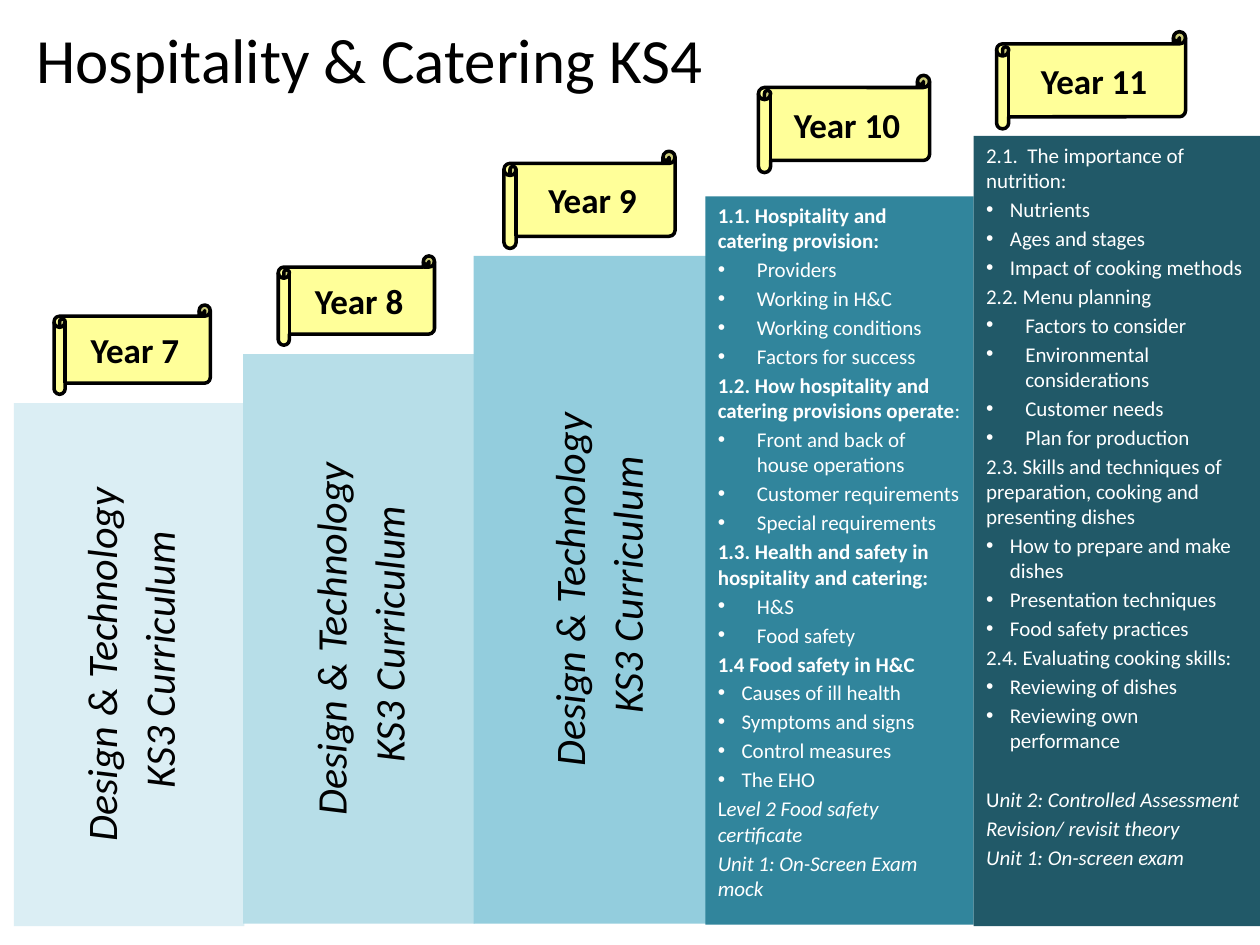
"""Build a staircase of school years for the Hospitality & Catering course."""
import pptx
import pptx.util
import pptx.dml.color
import pptx.enum.shapes
import pptx.enum.text
import lxml.etree

Cm, Pt = pptx.util.Cm, pptx.util.Pt
Shape = pptx.enum.shapes.MSO_SHAPE
Align = pptx.enum.text.PP_ALIGN
Anchor = pptx.enum.text.MSO_ANCHOR

TITLE = "Hospitality & Catering KS4"
KS3 = ["Design & Technology", " KS3 Curriculum"]

TEN = [
    ("head", "1.1. Hospitality and catering provision:"),
    ("wide", "Providers"),
    ("wide", "Working in H&C"),
    ("wide", "Working conditions"),
    ("wide", "Factors for success"),
    ("head", "1.2. How hospitality and catering provisions operate|:"),
    ("wide", "Front and back of house operations"),
    ("wide", "Customer requirements"),
    ("wide", "Special requirements"),
    ("head", "1.3. Health and safety in hospitality and catering:"),
    ("wide", "H&S"),
    ("wide", "Food safety"),
    ("head", "1.4 Food safety in H&C"),
    ("slim", "Causes of ill health"),
    ("slim", "Symptoms and signs"),
    ("slim", "Control measures"),
    ("slim", "The EHO"),
    ("mixed", "L|evel 2 Food safety certificate"),
    ("note", "Unit 1: On-Screen Exam mock"),
]

LAST = [
    ("plain", "2.1.  The importance of nutrition:"),
    ("slim", "Nutrients"),
    ("slim", "Ages and stages"),
    ("slim", "Impact of cooking methods"),
    ("plain", "2.2. Menu planning"),
    ("wide", "Factors to consider"),
    ("wide", "Environmental considerations"),
    ("wide", "Customer needs"),
    ("wide", "Plan for production"),
    ("plain", "2.3. Skills and techniques of preparation, cooking and presenting dishes"),
    ("slim", "How to prepare and make dishes"),
    ("slim", "Presentation techniques"),
    ("slim", "Food safety practices"),
    ("plain", "2.4. Evaluating cooking skills:"),
    ("slim", "Reviewing of dishes"),
    ("slim", "Reviewing own performance"),
    ("apart", "U|nit 2: Controlled Assessment"),
    ("note", "Revision/ revisit theory"),
    ("note", "Unit 1: On-screen exam"),
]

STYLES = {
    "head": dict(marks=("b", "")),
    "plain": dict(),
    "wide": dict(indent=0.79),
    "slim": dict(indent=0.48),
    "mixed": dict(marks=("", "i")),
    "apart": dict(marks=("", "i"), gap=19),
    "note": dict(marks=("i",)),
}

STEPS = [
    ((0.28, 8.13, 4.65, 10.54), "DBEEF4", None),
    ((4.9, 7.14, 4.67, 11.48), "B7DEE8", None),
    ((9.55, 5.16, 4.98, 13.46), "93CDDD", None),
    ((14.22, 3.96, 5.41, 14.68), "31859C", TEN),
    ((19.63, 2.74, 5.77, 15.93), "215968", LAST),
]

SCROLLS = [
    ("Year 7", (1.09, 6.15, 3.15, 1.8)),
    ("Year 8", (5.61, 5.16, 3.15, 1.8)),
    ("Year 9", (10.16, 3.05, 3.45, 1.96)),
    ("Year 10", (15.29, 1.52, 3.45, 1.96)),
    ("Year 11", (20.09, 0.64, 3.81, 1.96)),
]


def tint(code):
    return pptx.dml.color.RGBColor.from_string(code)


def write(frame, text, size=12, color="000000", marks=("",), align=Align.LEFT,
          gap=None, indent=0):
    para = frame.add_paragraph() if frame.text else frame.paragraphs[0]
    para.alignment = align
    para.space_before = Pt(round(size * 0.18, 2) if gap is None else gap)
    if indent:
        props = para._p.get_or_add_pPr()
        props.set("marL", str(Cm(indent)))
        props.set("indent", str(-Cm(indent)))
        space = props.nsmap["a"]
        font = lxml.etree.SubElement(props, "{%s}buFont" % space)
        font.set("typeface", "Arial")
        mark = lxml.etree.SubElement(props, "{%s}buChar" % space)
        mark.set("char", "•")
    for part, look in zip(text.split("|"), marks):
        run = para.add_run()
        run.text = part
        run.font.name = "Calibri"
        run.font.size = Pt(size)
        run.font.color.rgb = tint(color)
        run.font.bold = look == "b"
        run.font.italic = look == "i"


def block(slide, kind, box, fill, anchor):
    shape = slide.shapes.add_shape(kind, *map(Cm, box))
    shape.shadow.inherit = False
    shape.fill.solid()
    shape.fill.fore_color.rgb = tint(fill)
    shape.line.fill.background()
    shape.text_frame.word_wrap = True
    shape.text_frame.vertical_anchor = anchor
    return shape


def main():
    deck = pptx.Presentation()
    deck.slide_width, deck.slide_height = Cm(25.4), Cm(19.05)
    slide = deck.slides.add_slide(deck.slide_layouts[6])

    title = slide.shapes.add_textbox(Cm(0.48), Cm(0.28), Cm(14.05), Cm(1.8))
    write(title.text_frame, TITLE, size=36, gap=0)

    for box, fill, topics in STEPS:
        anchor = Anchor.TOP if topics else Anchor.MIDDLE
        frame = block(slide, Shape.RECTANGLE, box, fill, anchor).text_frame
        if topics:
            for style, text in topics:
                write(frame, text, color="FFFFFF", **STYLES[style])
        else:
            frame._txBody.bodyPr.set("vert", "vert270")
            for text in KS3:
                write(frame, text, size=24, marks=("i",), align=Align.CENTER)

    for year, box in SCROLLS:
        scroll = block(slide, Shape.HORIZONTAL_SCROLL, box, "FFFF99", Anchor.MIDDLE)
        scroll.line.color.rgb = tint("000000")
        scroll.line.width = Pt(2)
        write(scroll.text_frame, year, size=20, marks=("b",), align=Align.CENTER, gap=0)

    deck.save("out.pptx")


if __name__ == "__main__":
    main()
